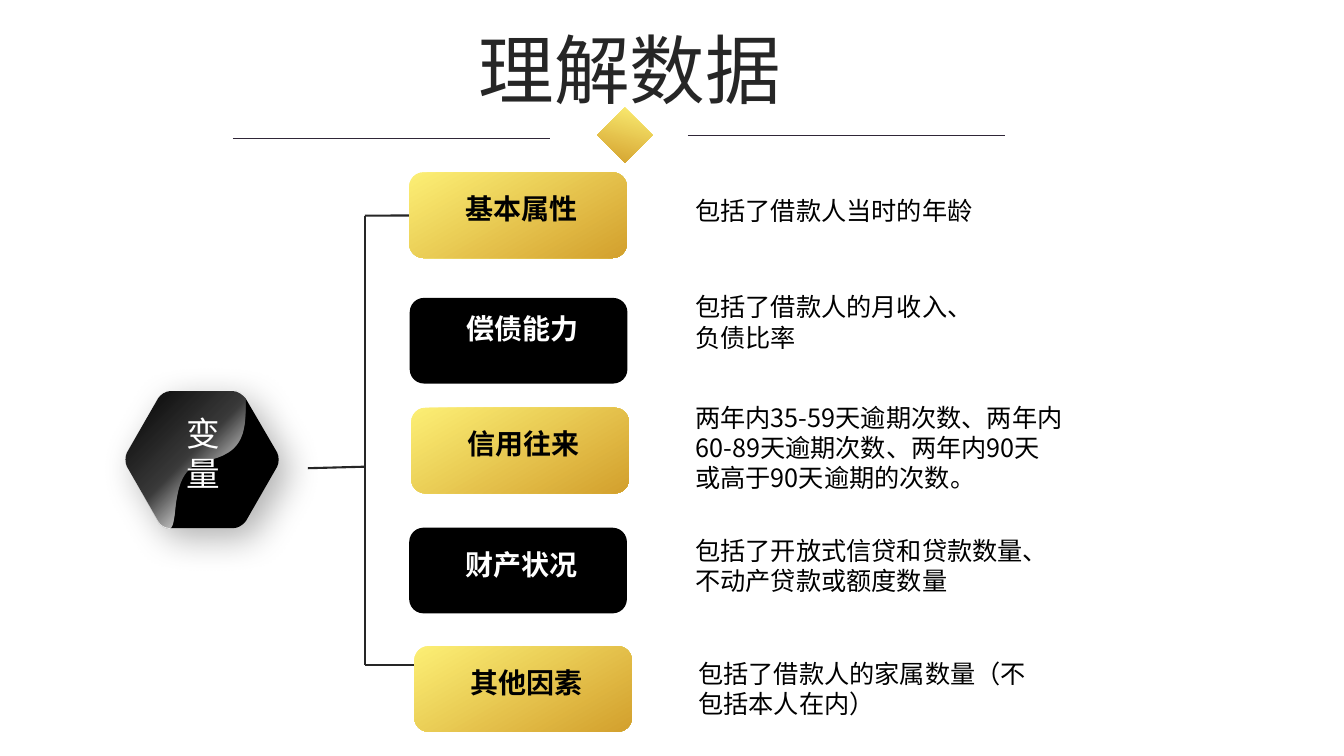
from dataclasses import dataclass

import lxml.etree
import pptx
import pptx.dml.color
import pptx.enum.shapes
import pptx.enum.text
import pptx.oxml.ns
import pptx.shapes.autoshape
import pptx.slide
import pptx.util

qn = pptx.oxml.ns.qn
KIND = pptx.enum.shapes.MSO_SHAPE
ALIGN = pptx.enum.text.PP_ALIGN
Shape = pptx.shapes.autoshape.Shape
Slide = pptx.slide.Slide
Stops = tuple[tuple[int, str, int], ...]
Curve = tuple[tuple[float, float], ...]

COLS, ROWS = 133.33, 75
CELL = pptx.util.Inches(0.1)


@dataclass(frozen=True)
class Theme:
    font: str = "Noto Sans CJK SC"
    dark: str = "000000"
    light: str = "FFFFFF"
    ink: str = "262626"
    rule: str = "2F2637"
    gold: Stops = ((0, "FCEF75", 100), (100, "D3A02D", 100))
    gloss: Stops = ((0, "FFFFFF", 0), (50, "FFFFFF", 23), (74, "FFFFFF", 80))
    title: int = 54
    hub: int = 24
    label: int = 20
    note: int = 18
    thin: float = 0.5
    thick: float = 1.5


@dataclass(frozen=True)
class Box:
    left: float
    top: float
    wide: float
    high: float

    def place(self) -> tuple[int, int, int, int]:
        return cells(self.left), cells(self.top), cells(self.wide), cells(self.high)


@dataclass(frozen=True)
class Card:
    left: float
    top: float
    drop: float
    label: str
    black: bool
    note: Box
    lines: tuple[str, ...]
    wrap: bool = True
    lead: float = 0
    loose: bool = False


@dataclass(frozen=True)
class Line:
    left: float
    top: float
    right: float
    base: float
    tint: str
    width: float


THEME = Theme()

LINES = (
    Line(23.1, 13.7, 54.6, 13.7, THEME.rule, THEME.thin),
    Line(68.25, 13.4, 99.7, 13.4, THEME.rule, THEME.thin),
    Line(36.2, 21.4, 36.2, 66, THEME.ink, THEME.thick),
    Line(45.9, 21.35, 36.2, 21.4, THEME.ink, THEME.thick),
    Line(36.2, 46.3, 30.55, 46.45, THEME.ink, THEME.thick),
    Line(45.9, 66, 36.2, 66, THEME.ink, THEME.thick),
)

CARDS = (
    Card(40.6, 17.1, 1.4, "基本属性", False, Box(68, 18.9, 38.5, 4),
         ("包括了借款人当时的年龄",), lead=3.6, loose=True),
    Card(40.65, 29.55, 0.9, "偿债能力", True, Box(68, 28.45, 29.8, 8.1),
         ("包括了借款人的月收入、", "负债比率"), wrap=False),
    Card(40.8, 40.45, 1.35, "信用往来", False, Box(68, 39.4, 38.5, 10.1),
         ("两年内35-59天逾期次数、两年内60-89天逾期次数、两年内90天或高于90天逾期的次数。",),
         lead=3.6),
    Card(40.6, 52.35, 1.5, "财产状况", True, Box(68, 52.6, 37.4, 8.1),
         ("包括了开放式信贷和贷款数量、", "不动产贷款或额度数量"), wrap=False),
    Card(41.1, 64.1, 1.4, "其他因素", False, Box(68.3, 64.8, 36.7, 7.1),
         ("包括了借款人的家属数量（不包括本人在内）",), loose=True),
)

START = (16.9, 52.4)
WEST: tuple[Curve, ...] = (
    ((16.4, 52.4), (15.9, 52.1), (15.7, 51.7)),
    ((12.6, 46.3),),
    ((12.4, 45.9), (12.4, 45.3), (12.6, 44.9)),
    ((15.7, 39.5),),
    ((15.9, 39.2), (16.4, 38.8), (16.9, 38.8)),
    ((23.1, 38.8),),
    ((23.6, 38.8), (24.1, 39.2), (24.35, 39.5)),
)
EAST: tuple[Curve, ...] = (
    ((27.5, 44.9),),
    ((27.7, 45.3), (27.7, 45.9), (27.5, 46.3)),
    ((24.4, 51.7),),
    ((24.1, 52.1), (23.6, 52.4), (23.2, 52.4)),
)
SWOOSH: tuple[Curve, ...] = (
    ((24.4, 42.9), (24.2, 44.9), (20.6, 45.7)),
    ((16.6, 46.4), (17.9, 51.6), (16.9, 52.4)),
)


def cells(count: float) -> int:
    return round(count * CELL)


def color(code: str) -> pptx.dml.color.RGBColor:
    return pptx.dml.color.RGBColor.from_string(code)


def paint(shape: Shape, code: str) -> None:
    shape.fill.solid()
    shape.fill.fore_color.rgb = color(code)


def blend(shape: Shape, stops: Stops, angle: int) -> None:
    shape.fill.background()
    props = shape.element.spPr
    fill = lxml.etree.Element(qn("a:gradFill"), rotWithShape="1")
    group = lxml.etree.SubElement(fill, qn("a:gsLst"))
    for place, code, alpha in stops:
        stop = lxml.etree.SubElement(group, qn("a:gs"), pos=str(place * 1000))
        tint = lxml.etree.SubElement(stop, qn("a:srgbClr"), val=code)
        if alpha < 100:
            lxml.etree.SubElement(tint, qn("a:alpha"), val=str(alpha * 1000))
    lxml.etree.SubElement(fill, qn("a:lin"), ang=str(angle * 60000), scaled="0")
    props.replace(props.find(qn("a:noFill")), fill)


def shade(shape: Shape) -> None:
    group = shape.element.spPr.find(qn("a:effectLst"))
    cast = lxml.etree.SubElement(
        group, qn("a:outerShdw"), blurRad=str(pptx.util.Pt(26)),
        dist=str(pptx.util.Pt(10)), dir=str(45 * 60000), algn="tl", rotWithShape="0")
    tint = lxml.etree.SubElement(cast, qn("a:srgbClr"), val=THEME.dark)
    lxml.etree.SubElement(tint, qn("a:alpha"), val="31000")


def plain(shape: Shape) -> Shape:
    shape.shadow.inherit = False
    shape.line.fill.background()
    return shape


def block(slide: Slide, kind: KIND, box: Box) -> Shape:
    return plain(slide.shapes.add_shape(kind, *box.place()))


def write(slide: Slide, box: Box, lines: tuple[str, ...], size: int, code: str,
          wrap: bool = True, bold: bool = False, lead: float = 0,
          align: ALIGN = ALIGN.LEFT) -> None:
    frame = slide.shapes.add_textbox(*box.place()).text_frame
    frame.word_wrap = wrap
    frame.auto_size = pptx.enum.text.MSO_AUTO_SIZE.SHAPE_TO_FIT_TEXT
    frame.text = "\n".join(lines)
    for para in frame.paragraphs:
        para.alignment = align
        para.space_before = pptx.util.Pt(lead)
        for run in para.runs:
            run.font.size = pptx.util.Pt(size)
            run.font.bold = bold
            run.font.color.rgb = color(code)
            run.font.name = THEME.font
            lxml.etree.SubElement(run.font._element, qn("a:ea"), typeface=THEME.font)


def rule(slide: Slide, line: Line) -> None:
    link = slide.shapes.add_connector(
        pptx.enum.shapes.MSO_CONNECTOR.STRAIGHT,
        cells(line.left), cells(line.top), cells(line.right), cells(line.base))
    link.line.color.rgb = color(line.tint)
    link.line.width = pptx.util.Pt(line.width)
    lxml.etree.SubElement(link.element.spPr, qn("a:effectLst"))


def trace(slide: Slide, curves: tuple[Curve, ...]) -> Shape:
    spots = [(cells(x), cells(y)) for curve in curves for x, y in curve]
    pen = slide.shapes.build_freeform(cells(START[0]), cells(START[1]))
    pen.add_line_segments(spots, close=True)
    shape = pen.convert_to_shape()
    legs = iter(list(shape.element.spPr.iter(qn("a:lnTo"))))
    for curve in curves:
        group = [next(legs) for _ in curve]
        if len(group) == 3:
            bend = lxml.etree.Element(qn("a:cubicBezTo"))
            group[0].addprevious(bend)
            for leg in group:
                bend.append(leg[0])
                leg.getparent().remove(leg)
    return plain(shape)


def draw_card(slide: Slide, card: Card) -> None:
    shape = block(slide, KIND.ROUNDED_RECTANGLE, Box(card.left, card.top, 21.6, 8.5))
    if card.black:
        paint(shape, THEME.dark)
    else:
        blend(shape, THEME.gold, 60)
    label = Box(card.left + 4.6, card.top + card.drop, 14.2 if card.loose else 13.3, 4.4)
    write(slide, label, (card.label,), THEME.label,
          THEME.light if card.black else THEME.dark, wrap=card.loose, bold=True)
    write(slide, card.note, card.lines, THEME.note, THEME.dark, card.wrap, lead=card.lead)


def main() -> None:
    deck = pptx.Presentation()
    deck.slide_width, deck.slide_height = cells(COLS), cells(ROWS)
    slide = deck.slides.add_slide(deck.slide_layouts[6])
    gem = block(slide, KIND.RECTANGLE, Box(60.05, 11.45, 3.9, 3.9))
    gem.rotation = 45
    blend(gem, THEME.gold, 60)
    write(slide, Box(46.5, 1.75, 32.3, 10.1), ("理解数据",), THEME.title, THEME.ink, wrap=False)
    for line in LINES:
        rule(slide, line)
    for card in CARDS:
        draw_card(slide, card)
    body = trace(slide, WEST + EAST)
    paint(body, THEME.dark)
    shade(body)
    blend(trace(slide, WEST + SWOOSH), THEME.gloss, 45)
    write(slide, Box(16.8, 40.45, 6.8, 9.1), ("变量",), THEME.hub, THEME.light,
          align=ALIGN.CENTER)
    deck.save("out.pptx")


if __name__ == "__main__":
    main()
